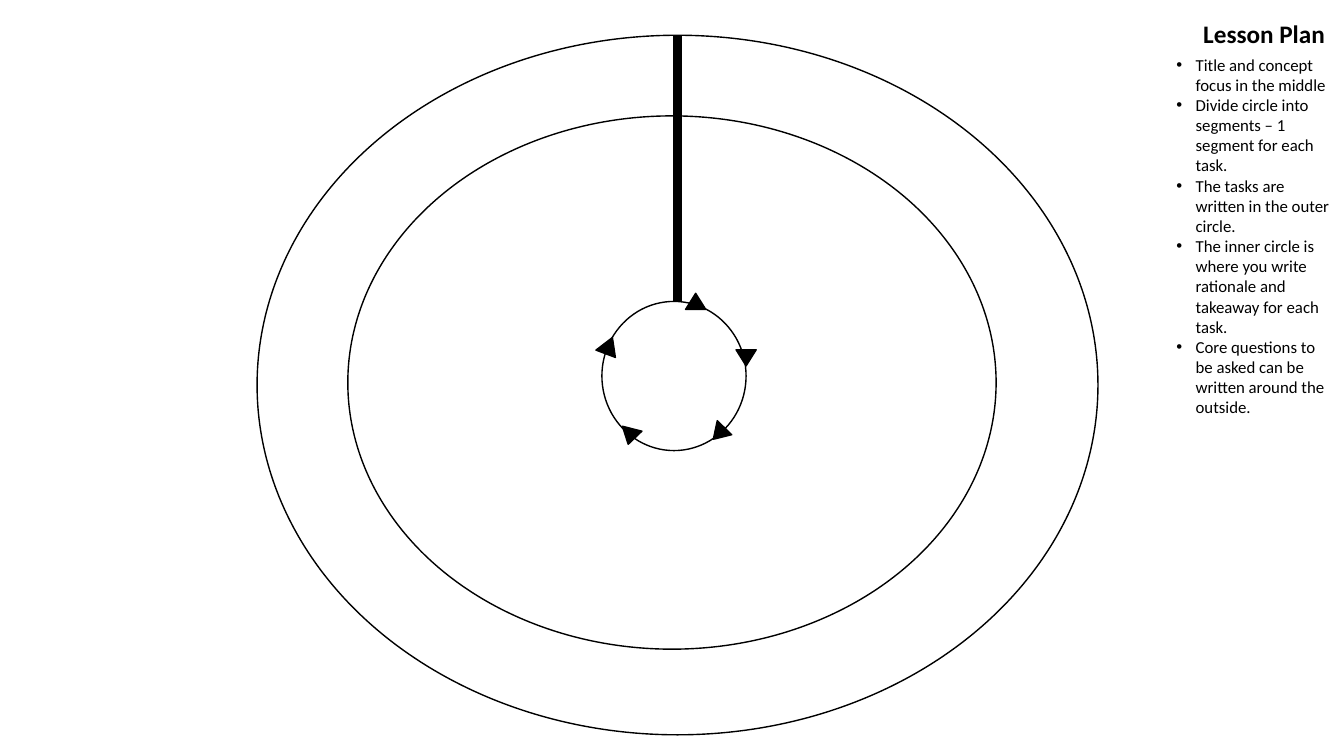
from lxml import etree
from pptx import Presentation
from pptx.dml.color import RGBColor
from pptx.enum.shapes import MSO_CONNECTOR, MSO_SHAPE
from pptx.enum.text import MSO_ANCHOR, MSO_AUTO_SIZE, PP_ALIGN
from pptx.oxml.ns import qn
from pptx.util import Inches, Pt

BLACK = RGBColor(0x00, 0x00, 0x00)
WHITE = RGBColor(0xFF, 0xFF, 0xFF)
CIRCLE = MSO_SHAPE.FLOWCHART_CONNECTOR
TRIANGLE = MSO_SHAPE.ISOSCELES_TRIANGLE
RECTANGLE = MSO_SHAPE.RECTANGLE
STRAIGHT = MSO_CONNECTOR.STRAIGHT
MIDDLE = MSO_ANCHOR.MIDDLE
TOP = MSO_ANCHOR.TOP
GROW = MSO_AUTO_SIZE.SHAPE_TO_FIT_TEXT
LEFT = PP_ALIGN.LEFT
RIGHT = PP_ALIGN.RIGHT
TOP_SITE = 0

RINGS = [
    (2.55, 0.35, 8.34, 6.94),
    (3.45, 1.15, 6.43, 5.29),
    (5.97, 2.99, 1.43, 1.48),
]
# Left, top, width, height and rotation, clockwise from the divider
ARROWHEADS = [
    (6.8, 2.91, 0.2, 0.16, 0),
    (7.3, 3.47, 0.2, 0.16, 180),
    (7.03, 4.22, 0.2, 0.16, 224.1),
    (6.15, 4.25, 0.2, 0.16, 194.3),
    (5.9, 3.37, 0.2, 0.18, 261.6),
]
INSTRUCTIONS = [
    "Title and concept focus in the middle",
    "Divide circle into segments – 1 segment for each task.",
    "The tasks are written in the outer circle.",
    "The inner circle is where you write rationale and takeaway for each task.",
    "Core questions to be asked can be written around the outside.",
]


class LessonPage:
    """Holds the slide and the style shared by its elements."""

    text_format = {"name": "Calibri", "size": Pt(12), "bold": False}
    title_format = {"name": "Calibri", "size": Pt(18), "bold": True}
    bullet_indent = Inches(0.19)

    def __init__(self, page):
        self.shapes = page.shapes

    def shape(self, kind, place, fill, line_width=1, rotation=0):
        shape = self.shapes.add_shape(kind, *map(Inches, place))
        shape.shadow.inherit = False
        shape.rotation = rotation
        shape.fill.solid()
        shape.fill.fore_color.rgb = fill
        if line_width:
            shape.line.color.rgb = BLACK
            shape.line.width = Pt(line_width)
        else:
            shape.line.fill.background()
        return shape

    def divider(self, outer_ring, start, end):
        """Draw the thick line that starts at the top of the outer ring."""
        line = self.shapes.add_connector(STRAIGHT, *map(Inches, start + end))
        line.begin_connect(outer_ring, TOP_SITE)
        line.line.color.rgb = BLACK
        line.line.width = Pt(6)
        etree.SubElement(line._element.spPr, qn("a:effectLst"))

    def fill_paragraph(self, para, text, alignment, formats):
        para.alignment = alignment
        span = para.add_run()
        span.text = text
        for name, value in formats.items():
            setattr(span.font, name, value)
        span.font.color.rgb = BLACK

    def title(self, place, text):
        frame = self.shape(RECTANGLE, place, WHITE, line_width=0).text_frame
        frame.vertical_anchor = MIDDLE
        self.fill_paragraph(frame.paragraphs[0], text, RIGHT, self.title_format)

    def bullets(self, place, items):
        frame = self.shapes.add_textbox(*map(Inches, place)).text_frame
        frame.word_wrap = True
        frame.auto_size = GROW
        frame.vertical_anchor = TOP
        for number, item in enumerate(items):
            para = frame.add_paragraph() if number else frame.paragraphs[0]
            properties = para._p.get_or_add_pPr()
            properties.set("marL", str(self.bullet_indent))
            properties.set("indent", str(-self.bullet_indent))
            etree.SubElement(properties, qn("a:buFont"), typeface="Arial")
            etree.SubElement(properties, qn("a:buChar"), char="•")
            self.fill_paragraph(para, item, LEFT, self.text_format)


def main():
    deck = Presentation()
    deck.slide_width = Inches(13.33)
    deck.slide_height = Inches(7.5)
    page = LessonPage(deck.slides.add_slide(deck.slide_layouts[6]))

    rings = [page.shape(CIRCLE, place, WHITE) for place in RINGS]
    for *place, rotation in ARROWHEADS:
        page.shape(TRIANGLE, place, BLACK, rotation=rotation)
    page.divider(rings[0], (6.72, 0.35), (6.72, 2.99))
    page.title((10.59, 0.09, 2.65, 0.48), "Lesson Plan")
    page.bullets((11.57, 0.49, 1.73, 3.74), INSTRUCTIONS)
    deck.save("out.pptx")


if __name__ == "__main__":
    main()
